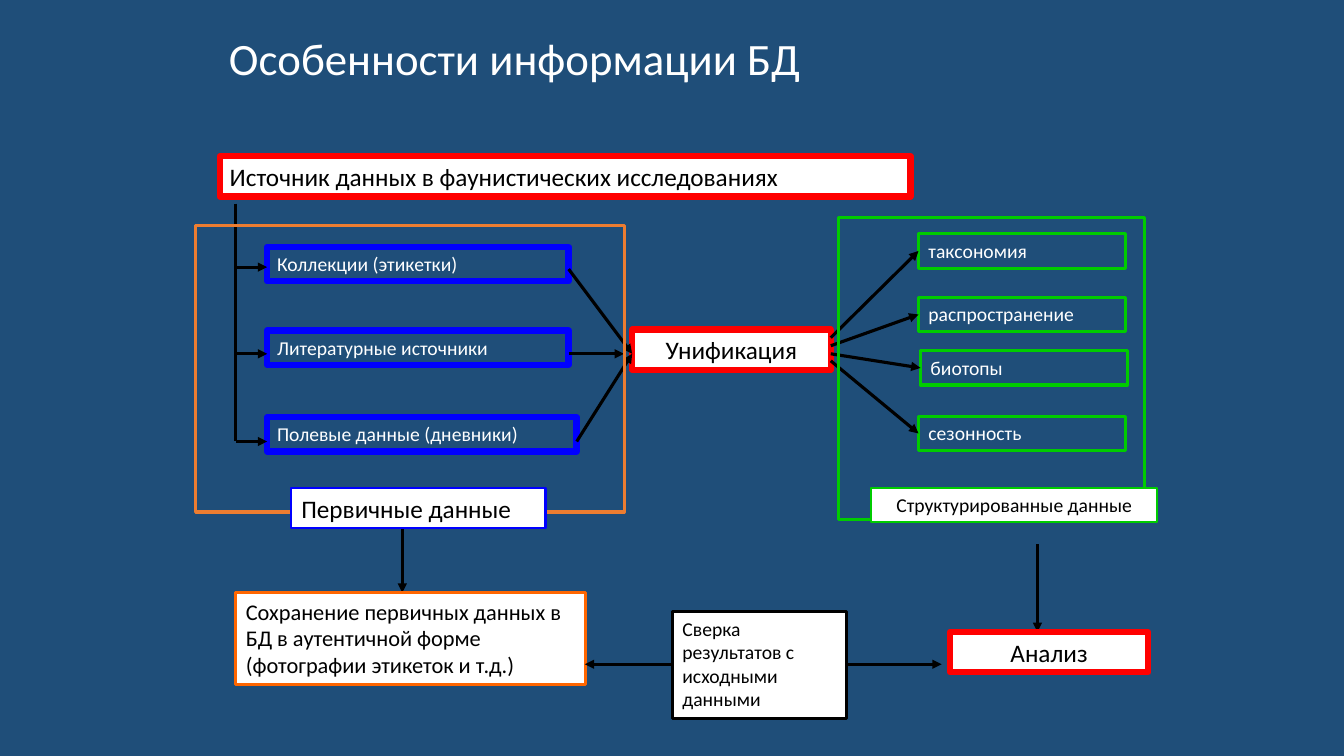
from pptx import Presentation
from pptx import util as u
from pptx.dml.color import RGBColor
from pptx.enum import shapes, text
from pptx.oxml.ns import qn
from lxml import etree

NAVY = RGBColor(0x1F, 0x4E, 0x79)
WHITE = RGBColor(0xFF, 0xFF, 0xFF)
BLACK = RGBColor(0, 0, 0)
RED = RGBColor(0xFF, 0, 0)
BLUE = RGBColor(0, 0, 0xFF)
GREEN = RGBColor(0, 0xCC, 0)
ORANGE = RGBColor(0xED, 0x7D, 0x31)
BRIGHT_ORANGE = RGBColor(0xFF, 0x66, 0)

LEFT, CENTER = text.PP_ALIGN.LEFT, text.PP_ALIGN.CENTER
LEFT_SIDE = 1


def write(frame, words, size=18, color=BLACK, align=LEFT,
          anchor=text.MSO_ANCHOR.TOP, fit=text.MSO_AUTO_SIZE.SHAPE_TO_FIT_TEXT):
    frame.word_wrap = True
    frame.auto_size = fit
    frame.vertical_anchor = anchor
    paragraph = frame.paragraphs[0]
    paragraph.alignment = align
    run = paragraph.add_run()
    run.text = words
    run.font.name = "Calibri"
    run.font.size = u.Pt(size)
    run.font.color.rgb = color
    return paragraph


def frame(slide, at, border, weight=2.25, fill=None):
    box = slide.shapes.add_shape(shapes.MSO_SHAPE.RECTANGLE, *map(u.Inches, at))
    box.shadow.inherit = False
    if fill is None:
        box.fill.background()
    else:
        box.fill.solid()
        box.fill.fore_color.rgb = fill
    box.line.color.rgb = border
    box.line.width = u.Pt(weight)
    return box


def label(slide, at, words, border, weight=2.25, fill=WHITE, **style):
    box = frame(slide, at, border, weight, fill)
    write(box.text_frame, words, **style)
    return box


def link(slide, start, end, heads=("tailEnd",), target=None):
    line = slide.shapes.add_connector(
        shapes.MSO_CONNECTOR.STRAIGHT, *map(u.Inches, (*start, *end)))
    line.line.color.rgb = BLACK
    line.line.width = u.Pt(2.25)
    outline = line.line._get_or_add_ln()
    for head in heads:
        etree.SubElement(outline, qn("a:" + head), type="triangle")
    etree.SubElement(line._element.spPr, qn("a:effectLst"))
    if target is not None:
        line.end_connect(target, LEFT_SIDE)


def add_title(slide):
    title = slide.shapes.title
    title.left, title.top, title.width, title.height = map(
        u.Inches, (2.17, 0.13, 9, 0.95))
    heading = write(title.text_frame, "Особенности информации БД", size=32, color=WHITE,
                    anchor=text.MSO_ANCHOR.MIDDLE, fit=text.MSO_AUTO_SIZE.NONE)
    heading.line_spacing = 0.9


def add_sources(slide):
    label(slide, (2.18, 1.55, 6.85, 0.4),
          "Источник данных в фаунистических исследованиях", RED, 4.5)
    trunk = 2.34
    link(slide, (trunk, 2.02), (trunk, 4.38), heads=())
    sources = [
        ("Коллекции (этикетки)", 2.45, 2.99, 2.65, (5.64, 2.67), (6.27, 3.51)),
        ("Литературные источники", 3.28, 2.99, 3.51, (5.64, 3.51), (6.19, 3.51)),
        ("Полевые данные (дневники)", 4.14, 3.07, 4.38, (5.72, 4.38), (6.27, 3.51)),
    ]
    for words, top, width, branch, start, end in sources:
        label(slide, (2.65, top, width, 0.34), words, BLUE, 4.5,
              fill=None, size=14, color=WHITE)
        link(slide, (trunk, branch), (2.65, branch))
        link(slide, start, end)
    frame(slide, (1.94, 2.24, 4.25, 2.84), ORANGE)
    label(slide, (2.89, 4.84, 2.52, 0.4), "Первичные данные", BLUE, 1.5)


def add_structured_data(slide):
    categories = [
        ("таксономия", 9.11, 2.32, 3.35),
        ("распространение", 9.11, 2.95, 3.43),
        ("биотопы", 9.13, 3.48, 3.51),
        ("сезонность", 9.11, 4.13, 3.58),
    ]
    for words, left, top, origin in categories:
        category = label(slide, (left, top, 2.05, 0.34), words, GREEN,
                         fill=None, size=14, color=WHITE)
        link(slide, (8.24, origin), (left, top + 0.17), target=category)
    frame(slide, (8.32, 2.16, 3.03, 2.99), GREEN)
    label(slide, (8.64, 4.84, 2.84, 0.34), "Структурированные данные", GREEN, 1.5,
          size=14, align=CENTER)


def add_outcomes(slide):
    link(slide, (10.29, 5.4), (10.29, 6.27))
    label(slide, (9.42, 6.27, 1.97, 0.4), "Анализ", RED, 4.5, align=CENTER)
    link(slide, (3.99, 5.25), (3.99, 5.88))
    label(slide, (2.34, 5.88, 3.47, 0.91),
          "Сохранение первичных данных в БД в аутентичной форме "
          "(фотографии этикеток и т.д.)", BRIGHT_ORANGE, size=16)
    link(slide, (9.34, 6.59), (5.8, 6.59), heads=("headEnd", "tailEnd"))
    label(slide, (6.67, 6.07, 1.73, 1.06),
          "Сверка результатов с исходными данными", BLACK, size=14)


def main():
    deck = Presentation()
    deck.slide_width, deck.slide_height = u.Inches(13.33), u.Inches(7.5)
    slide = deck.slides.add_slide(deck.slide_layouts.get_by_name("Title Only"))
    slide.background.fill.solid()
    slide.background.fill.fore_color.rgb = NAVY
    add_title(slide)
    label(slide, (6.27, 3.27, 1.97, 0.4), "Унификация", RED, 4.5, align=CENTER)
    add_sources(slide)
    add_structured_data(slide)
    add_outcomes(slide)
    deck.save("out.pptx")


if __name__ == "__main__":
    main()
